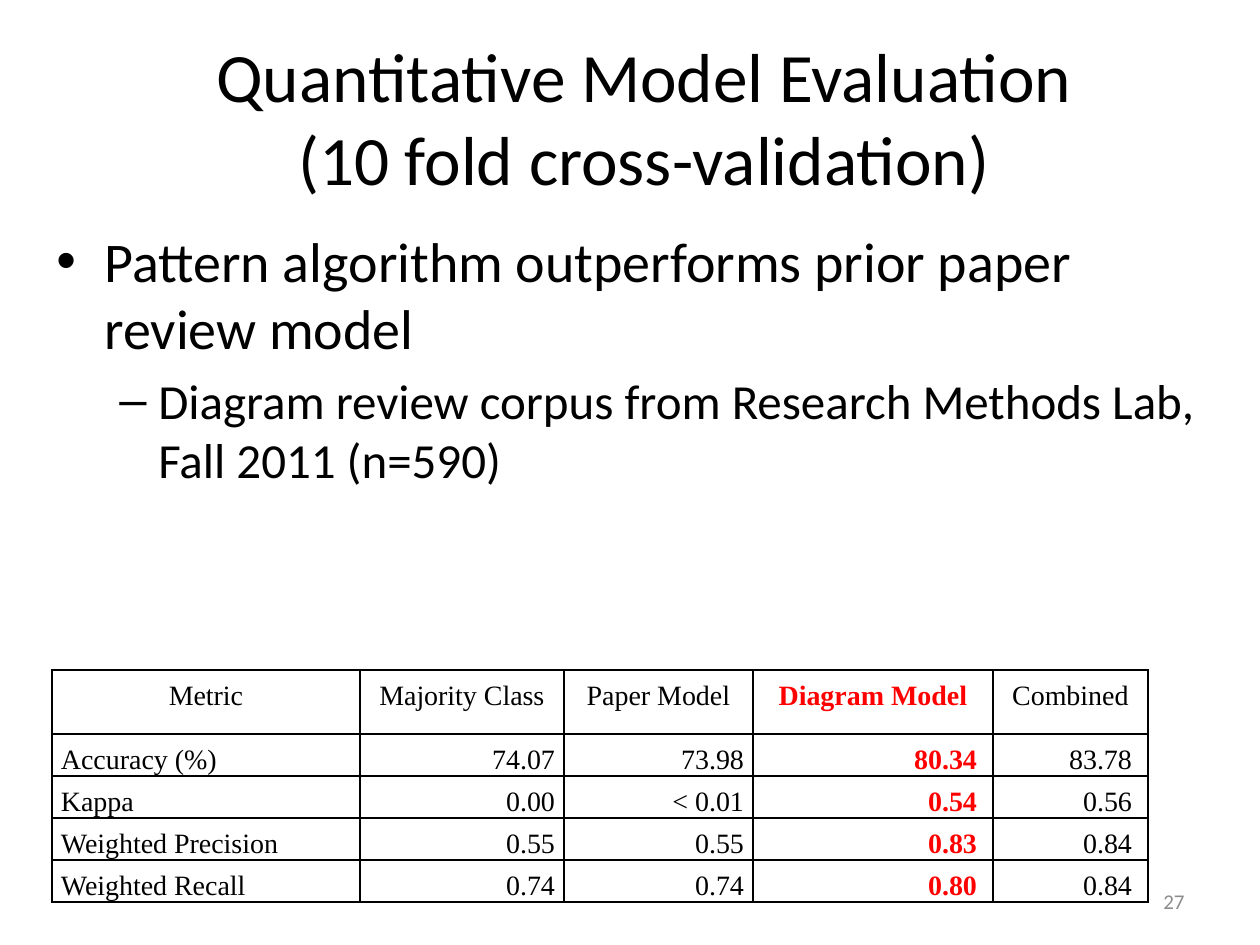
import pptx
import pptx.dml.color
import pptx.enum.text
import pptx.oxml
import pptx.oxml.ns
import pptx.util
from lxml import etree

RGBColor = pptx.dml.color.RGBColor
ALIGN = pptx.enum.text.PP_ALIGN
ANCHOR = pptx.enum.text.MSO_ANCHOR
BLACK = RGBColor(0, 0, 0)
RED = RGBColor(255, 0, 0)
GRAY = RGBColor(0x8C, 0x8C, 0x8C)

BULLETS = [
    ("Pattern algorithm outperforms prior paper review model", 0, 32, "•", 48, 48),
    ("Diagram review corpus from Research Methods Lab, Fall 2011 (n=590)", 1, 28, "–", 102, 39),
]
METRICS = [
    ["Metric", "Majority Class", "Paper Model", "Diagram Model", "Combined"],
    ["Accuracy (%)", "74.07", "73.98", "80.34", "83.78"],
    ["Kappa", "0.00", "< 0.01", "0.54", "0.56"],
    ["Weighted Precision", "0.55", "0.55", "0.83", "0.84"],
    ["Weighted Recall", "0.74", "0.74", "0.80", "0.84"],
]
COLUMNS = [308, 204, 189, 240, 155]
ROWS = [64, 42, 42, 42, 42]
HIGHLIGHT = 3


def px(n):
    return pptx.util.Emu(round(n * 914400 / 126))


def style(p, size, color=BLACK, font="Calibri", bold=False):
    for r in p.runs:
        r.font.name = font
        r.font.size = pptx.util.Pt(size)
        r.font.bold = bold
        r.font.color.rgb = color


def add_title(s, x, y, w, h):
    sp = s.shapes.title
    sp.left, sp.top, sp.width, sp.height = px(x), px(y), px(w), px(h)
    tf = sp.text_frame
    tf.auto_size = pptx.enum.text.MSO_AUTO_SIZE.NONE
    tf.vertical_anchor = ANCHOR.MIDDLE
    p = tf.paragraphs[0]
    p.text = "Quantitative Model Evaluation\v(10 fold cross-validation)"
    p.alignment = ALIGN.CENTER
    style(p, 39.6)


def add_text_box(s, x, y, w, h):
    tf = s.shapes.add_textbox(px(x), px(y), px(w), px(h)).text_frame
    tf.word_wrap = True
    return tf


def add_bullets(s, x, y, w, h):
    tf = add_text_box(s, x, y, w, h)
    tf.text = "\n".join(bullet[0] for bullet in BULLETS)
    for p, (_, level, size, mark, margin, hang) in zip(tf.paragraphs, BULLETS):
        p.level = level
        p.space_before = pptx.util.Pt(round(size * 0.2, 1))
        style(p, size)
        pPr = p._p.get_or_add_pPr()
        pPr.set("marL", str(px(margin)))
        pPr.set("indent", str(-px(hang)))
        etree.SubElement(pPr, pptx.oxml.ns.qn("a:buFont"), typeface="Arial")
        etree.SubElement(pPr, pptx.oxml.ns.qn("a:buChar"), char=mark)


def add_page_number(s, x, y, w, h):
    tf = add_text_box(s, x, y, w, h)
    tf.vertical_anchor = ANCHOR.MIDDLE
    tf.text = "27"
    tf.paragraphs[0].alignment = ALIGN.RIGHT
    style(tf.paragraphs[0], 12, GRAY)


def set_borders(cell):
    tcPr = cell._tc.get_or_add_tcPr()
    for i, side in enumerate(("lnL", "lnR", "lnT", "lnB")):
        tcPr.insert(i, pptx.oxml.parse_xml(
            f'<a:{side} {pptx.oxml.ns.nsdecls("a")} w="12700"><a:solidFill>'
            f'<a:srgbClr val="{BLACK}"/></a:solidFill></a:{side}>'))


def fill_cell(cell, text, row, col):
    cell.fill.background()
    cell.margin_left = px(9)
    cell.margin_right = px(16 if row and col >= HIGHLIGHT else 9)
    cell.margin_top = px(21)
    cell.margin_bottom = 0
    p = cell.text_frame.paragraphs[0]
    p.text = text
    p.line_spacing = pptx.util.Pt(12)
    if row == 0:
        p.alignment = ALIGN.CENTER
    else:
        p.alignment = ALIGN.RIGHT if col else ALIGN.JUSTIFY
    key = col == HIGHLIGHT
    style(p, 16, RED if key else BLACK, "Times New Roman", key)
    set_borders(cell)


def add_metrics(s, x, y):
    table = s.shapes.add_table(len(ROWS), len(COLUMNS), px(x), px(y),
                               px(sum(COLUMNS)), px(sum(ROWS))).table
    table.first_row = False
    table.horz_banding = False
    for column, width in zip(table.columns, COLUMNS):
        column.width = px(width)
    for row, height in zip(table.rows, ROWS):
        row.height = px(height)
    for i, values in enumerate(METRICS):
        for j, text in enumerate(values):
            fill_cell(table.cell(i, j), text, i, j)


def main():
    prs = pptx.Presentation()
    prs.slide_width, prs.slide_height = px(1260), px(945)
    s = prs.slides.add_slide(prs.slide_layouts[5])
    add_title(s, 28, 38, 1232, 157)
    add_bullets(s, 44, 220, 1186, 624)
    add_page_number(s, 903, 876, 294, 50)
    add_metrics(s, 52, 670)
    prs.save("out.pptx")


if __name__ == "__main__":
    main()
